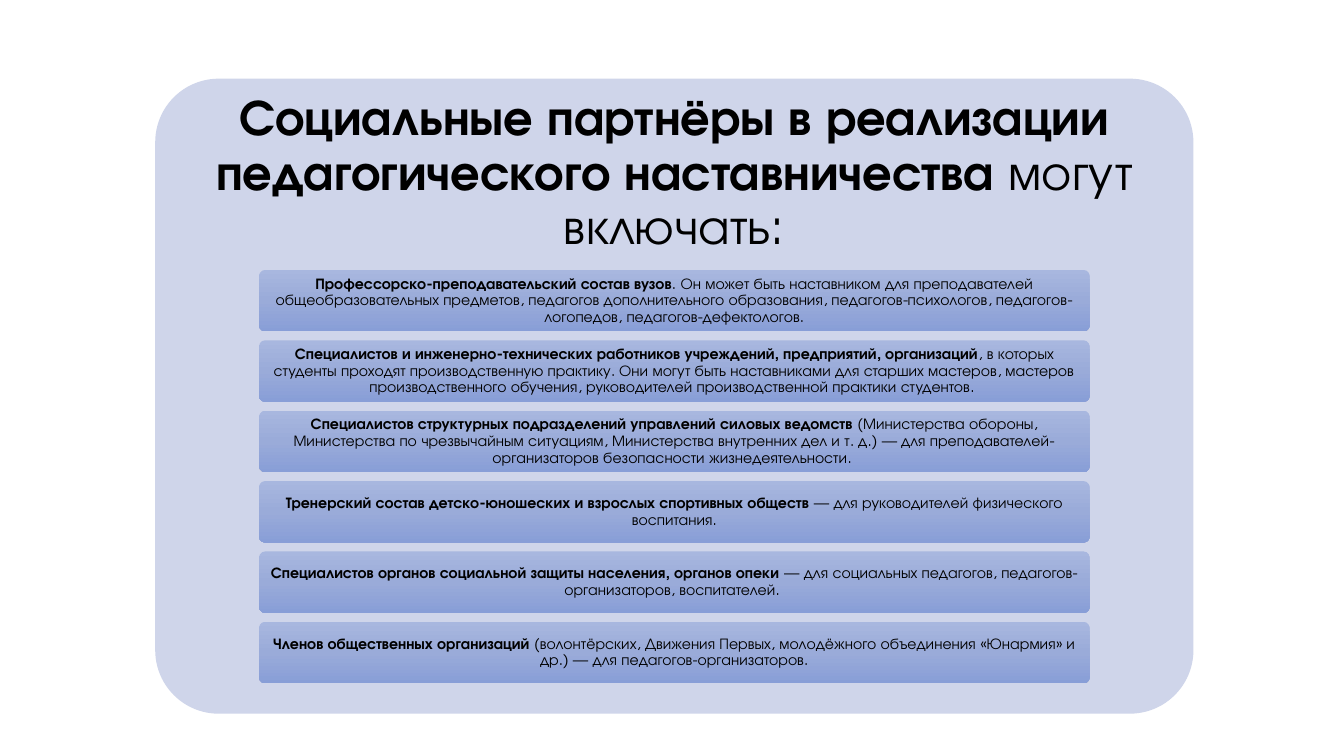
from copy import deepcopy
from dataclasses import dataclass

from pptx import Presentation
from pptx.dml.color import RGBColor
from pptx.enum import shapes, text
from pptx.util import Pt

FONT = "TeX Gyre Adventor"
BLACK = RGBColor(0x00, 0x00, 0x00)
PANEL_FILL = RGBColor(0xCF, 0xD5, 0xEA)
BAR_STOPS = (
    RGBColor(0xA8, 0xB7, 0xDF),
    RGBColor(0x9A, 0xAB, 0xD9),
    RGBColor(0x88, 0x9E, 0xD7),
)

# Lengths in points
PANEL_LEFT, PANEL_TOP, PANEL_W, PANEL_H = 110.9, 56.2, 741.6, 453.6
TITLE_H = 0.3 * PANEL_H
BAR_LEFT, BAR_W = PANEL_LEFT + 0.1 * PANEL_W, 0.8 * PANEL_W
BAR_TOP, BAR_H, BAR_STEP = 192.8, 43.9, 50.27


@dataclass
class Statement:
    bold: str
    plain: str


TITLE = Statement(
    "Социальные партнёры в реализации педагогического наставничества",
    " могут включать:",
)
PARTNERS = [
    Statement(
        "Профессорско-преподавательский состав вузов",
        ". Он может быть наставником для преподавателей общеобразовательных "
        "предметов, педагогов дополнительного образования, педагогов-психологов, "
        "педагогов-логопедов, педагогов-дефектологов.",
    ),
    Statement(
        "Специалистов и инженерно-технических работников учреждений, предприятий, "
        "организаций",
        ", в которых студенты проходят производственную практику. Они могут быть "
        "наставниками для старших мастеров, мастеров производственного обучения, "
        "руководителей производственной практики студентов. ",
    ),
    Statement(
        "Специалистов структурных подразделений управлений силовых ведомств",
        " (Министерства обороны, Министерства по чрезвычайным ситуациям, "
        "Министерства внутренних дел и т. д.) — для "
        "преподавателей-организаторов безопасности жизнедеятельности. ",
    ),
    Statement(
        "Тренерский состав детско-юношеских и взрослых спортивных обществ",
        " — для руководителей физического воспитания.",
    ),
    Statement(
        "Специалистов органов социальной защиты населения, органов опеки",
        " — для социальных педагогов, педагогов-организаторов, воспитателей. ",
    ),
    Statement(
        "Членов общественных организаций",
        " (волонтёрских, Движения Первых, молодёжного объединения «Юнармия» и "
        "др.) — для педагогов-организаторов.",
    ),
]


def add_rounded(s, left: float, top: float, width: float, height: float):
    sp = s.shapes.add_shape(
        shapes.MSO_SHAPE.ROUNDED_RECTANGLE,
        Pt(left), Pt(top), Pt(width), Pt(height),
    )
    sp.adjustments[0] = 0.1
    sp.shadow.inherit = False
    sp.line.fill.background()
    return sp


def fill_gradient(sp) -> None:
    sp.fill.gradient()
    sp.fill.gradient_angle = 270
    gs_list = sp.fill._fill._gradFill.gsLst
    gs_list.insert(1, deepcopy(gs_list[0]))
    for i, (stop, color) in enumerate(zip(sp.fill.gradient_stops, BAR_STOPS)):
        stop.position = i / 2
        stop.color.rgb = color


def write(sp, statement: Statement, size: float, inset_x: float, inset_y: float) -> None:
    tf = sp.text_frame
    frame_format = {
        "word_wrap": True,
        "vertical_anchor": text.MSO_ANCHOR.MIDDLE,
        "margin_left": Pt(inset_x),
        "margin_right": Pt(inset_x),
        "margin_top": Pt(inset_y),
        "margin_bottom": Pt(inset_y),
    }
    for name, value in frame_format.items():
        setattr(tf, name, value)
    p = tf.paragraphs[0]
    p.alignment = text.PP_ALIGN.CENTER
    p.line_spacing = 0.9
    for content, bold in ((statement.bold, True), (statement.plain, False)):
        r = p.add_run()
        r.text = content
        for name, value in {"name": FONT, "size": Pt(size), "bold": bold}.items():
            setattr(r.font, name, value)
        r.font.color.rgb = BLACK


def main() -> None:
    prs = Presentation()
    prs.slide_width, prs.slide_height = Pt(960), Pt(540)
    s = prs.slides.add_slide(prs.slide_layouts[6])

    # Panel and title
    panel = add_rounded(s, PANEL_LEFT, PANEL_TOP, PANEL_W, PANEL_H)
    panel.fill.solid()
    panel.fill.fore_color.rgb = PANEL_FILL
    title = s.shapes.add_textbox(
        Pt(PANEL_LEFT), Pt(PANEL_TOP), Pt(PANEL_W), Pt(TITLE_H)
    )
    write(title, TITLE, 36, 10.8, 10.8)

    # Partner bars
    for i, partner in enumerate(PARTNERS):
        bar = add_rounded(s, BAR_LEFT, BAR_TOP + i * BAR_STEP, BAR_W, BAR_H)
        fill_gradient(bar)
        write(bar, partner, 11, 2.2, 1.6)

    prs.save("out.pptx")


if __name__ == "__main__":
    main()
